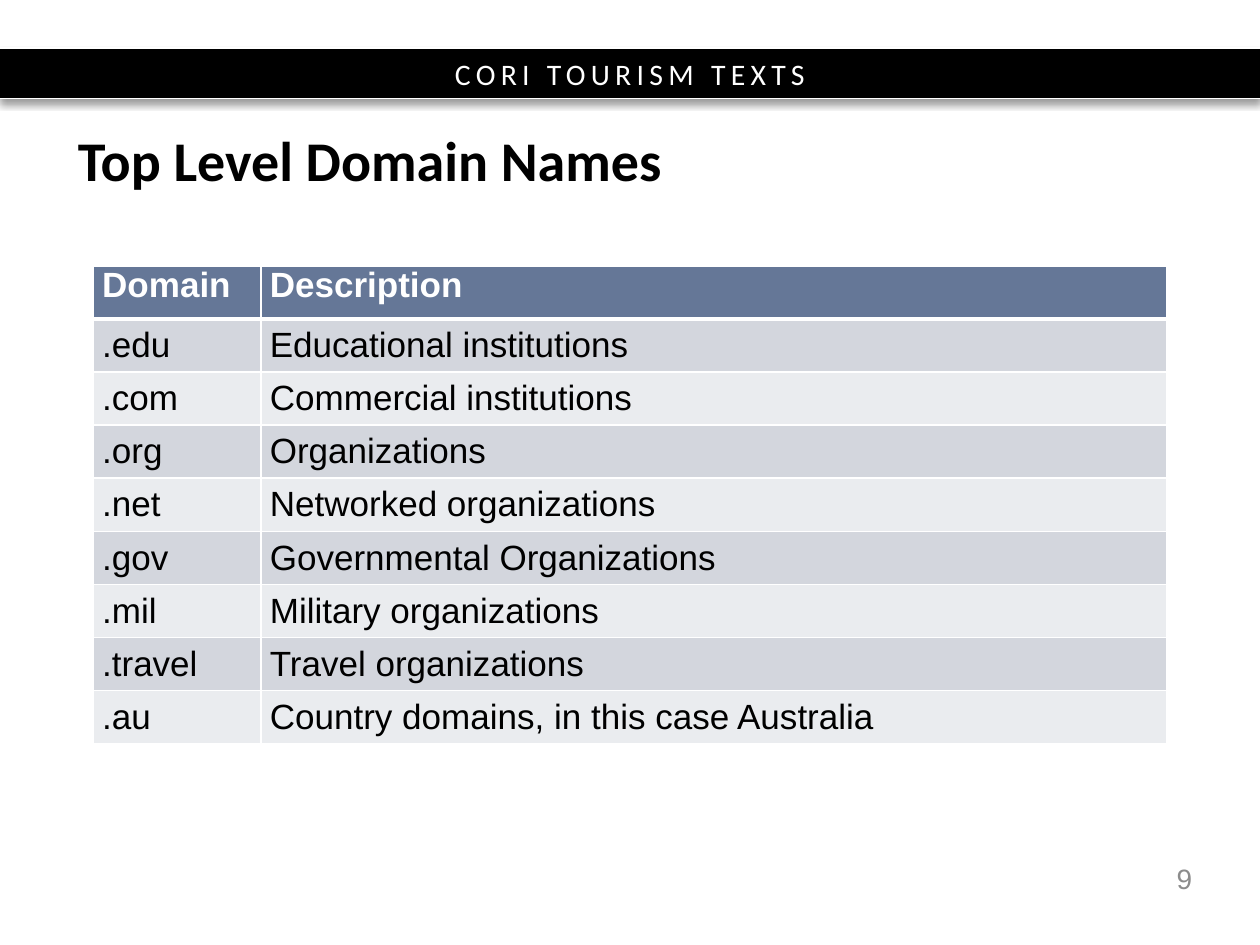
"""Build the slide on top level domain names."""
import pptx
import pptx.dml.color
import pptx.enum.shapes
import pptx.enum.text
import pptx.oxml
import pptx.oxml.ns
import pptx.util

Cm = pptx.util.Cm
Pt = pptx.util.Pt
ALIGN = pptx.enum.text.PP_ALIGN
ANCHOR = pptx.enum.text.MSO_ANCHOR
SPACE = pptx.oxml.ns.nsdecls("a")

ROWS = [
    ("Domain", "Description"),
    (".edu", "Educational institutions"),
    (".com", "Commercial institutions"),
    (".org", "Organizations"),
    (".net", "Networked organizations"),
    (".gov", "Governmental Organizations"),
    (".mil", "Military organizations"),
    (".travel", "Travel organizations"),
    (".au", "Country domains, in this case Australia"),
]


def paint(target, color):
    """Give a fill, line or font a solid colour from a hex string."""
    rgb = pptx.dml.color.RGBColor.from_string(color)
    if hasattr(target, "solid"):
        target.solid()
        target.fore_color.rgb = rgb
    elif hasattr(target, "fill"):
        paint(target.fill, color)
    else:
        target.color.rgb = rgb


def write(frame, text, font, size, color, bold=False, align=ALIGN.LEFT):
    """Put one formatted paragraph in a text frame and return it."""
    frame.text = text
    para = frame.paragraphs[0]
    para.alignment = align
    face = para.runs[0].font
    face.name, face.size, face.bold = font, Pt(size), bold
    face.fill.solid()
    paint(face.fill, color)
    return para


def add_box(slide, left, top, width, height, *style, **extra):
    """Add a wrapped text box with its text in the middle."""
    box = slide.shapes.add_textbox(Cm(left), Cm(top), Cm(width), Cm(height))
    frame = box.text_frame
    frame.word_wrap = True
    frame.vertical_anchor = ANCHOR.MIDDLE
    return write(frame, *style, **extra)


def add_rule(slide, top):
    """Draw a thin white line across the slide."""
    rule = slide.shapes.add_connector(
        pptx.enum.shapes.MSO_CONNECTOR.STRAIGHT, 0, Cm(top), Cm(25.4), Cm(top))
    rule.line.width = Pt(0.75)
    paint(rule.line, "FFFFFF")
    rule._element.spPr.append(pptx.oxml.parse_xml(f"<a:effectLst {SPACE}/>"))


def add_band(slide, text):
    """Draw the black series band with its soft shadow and edge lines."""
    top, height = 0.97, 1.02
    band = slide.shapes.add_shape(
        pptx.enum.shapes.MSO_SHAPE.RECTANGLE, 0, Cm(top), Cm(25.4), Cm(height))
    paint(band.fill, "000000")
    band.line.fill.background()
    band.shadow.inherit = False
    shadow = pptx.oxml.parse_xml(
        f'<a:outerShdw {SPACE} blurRad="{Pt(4)}" dist="{Pt(3)}" dir="5400000"'
        ' rotWithShape="0"><a:srgbClr val="000000"><a:alpha val="40000"/>'
        '</a:srgbClr></a:outerShdw>')
    band._element.spPr.find(pptx.oxml.ns.qn("a:effectLst")).append(shadow)
    band.text_frame.vertical_anchor = ANCHOR.MIDDLE
    para = write(band.text_frame, text, "Calibri", 17, "FFFFFF",
                 align=ALIGN.CENTER)
    para.runs[0].font._element.set("spc", "300")
    for edge in (top, top + height):
        add_rule(slide, edge)


def add_edges(cell, base):
    """Give a cell white borders, with its own width for the base."""
    props = cell._tc.get_or_add_tcPr()
    for side, width in zip("LRTB", (1, 1, 1, base)):
        props.append(pptx.oxml.parse_xml(
            f'<a:ln{side} {SPACE} w="{Pt(width)}"><a:solidFill>'
            f'<a:srgbClr val="FFFFFF"/></a:solidFill></a:ln{side}>'))


def fill_cell(cell, text, row):
    """Style one cell as header or as part of a striped body row."""
    head = row == 0
    cell.margin_left = cell.margin_right = Cm(0.18)
    cell.margin_top = cell.margin_bottom = 0
    cell.vertical_anchor = ANCHOR.TOP if head else ANCHOR.MIDDLE
    add_edges(cell, 3 if head else 1)
    shade = "657797" if head else ("EAECEF", "D3D6DD")[row % 2]
    paint(cell.fill, shade)
    write(cell.text_frame, text, "Arial", 20,
          "FFFFFF" if head else "000000", bold=head)


def add_grid(slide, rows):
    """Add the table of domains."""
    widths, height = (3.38, 18.27), 1.07
    grid = slide.shapes.add_table(
        len(rows), len(widths), Cm(1.88), Cm(5.36),
        Cm(sum(widths)), Cm(height * len(rows))).table
    for col, width in zip(grid.columns, widths):
        col.width = Cm(width)
    for row, texts in enumerate(rows):
        grid.rows[row].height = Cm(height)
        for col, text in enumerate(texts):
            fill_cell(grid.cell(row, col), text, row)


def main():
    """Build and save the slide."""
    deck = pptx.Presentation()
    deck.slide_width, deck.slide_height = Cm(25.4), Cm(19.05)
    slide = deck.slides.add_slide(deck.slide_layouts[6])
    add_band(slide, "CORI TOURISM TEXTS")
    add_grid(slide, ROWS)
    title = add_box(slide, 1.32, 2.72, 22.99, 1.22, "Top Level Domain Names",
                    "Calibri", 32, "000000", bold=True)
    title.line_spacing = Pt(32)
    add_box(slide, 18.36, 17.2, 5.92, 1.02, "9", "Arial", 16, "8C8C8C",
            align=ALIGN.RIGHT)
    deck.save("out.pptx")


if __name__ == "__main__":
    main()
